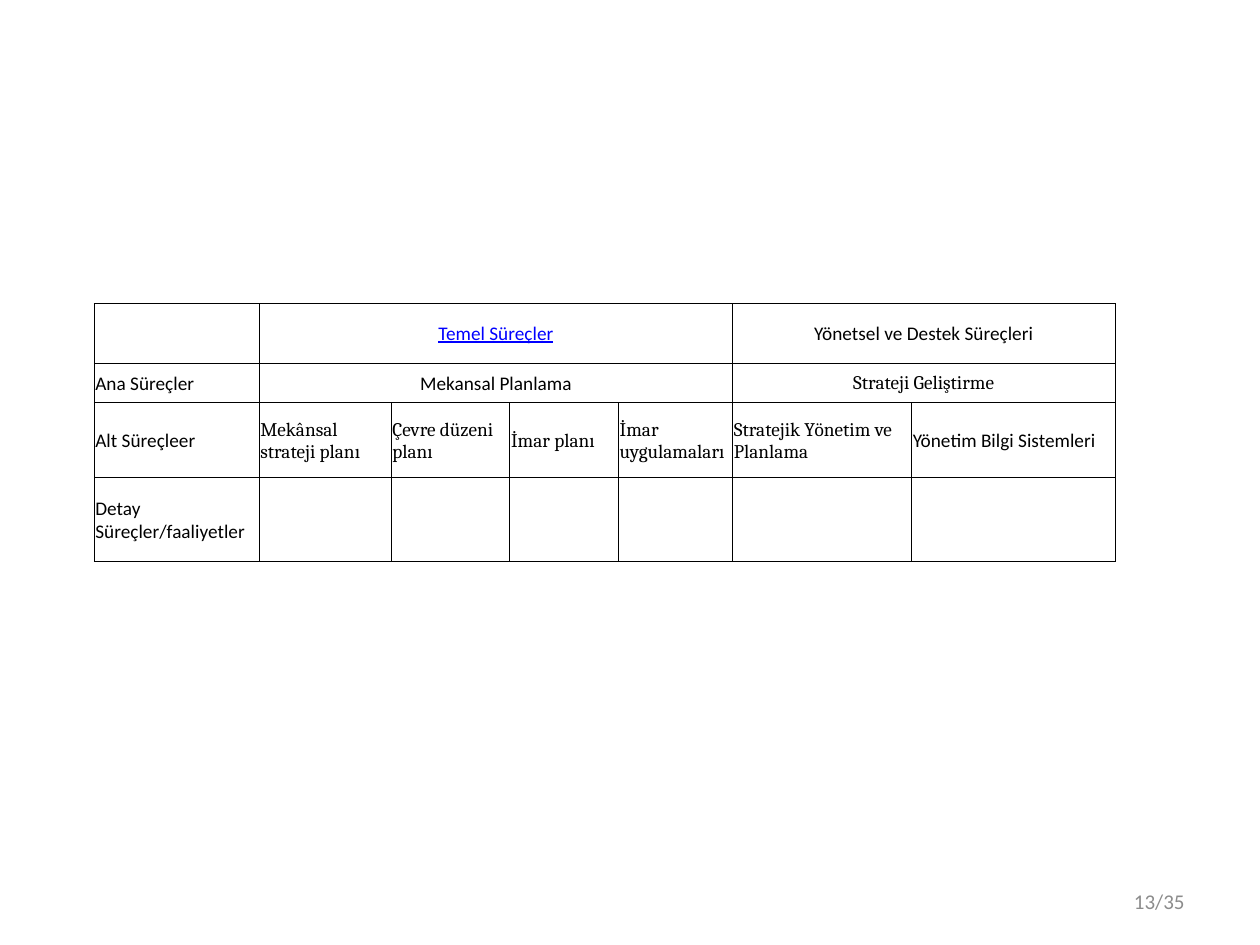
"""Build the process hierarchy table slide."""
from lxml import etree
from pptx import Presentation
from pptx.dml.color import RGBColor
from pptx.enum import text
from pptx.oxml import ns
from pptx.util import Pt

THEME = {
    "sans": "Calibri", "serif": "Cambria",
    "ink": "000000", "link": "0000FF", "muted": "8C8C8C",
    "body": 11, "page": 12, "border": 0.5,
}
LEFT, TOP = 53.8, 173.4
COLUMNS = [94.3, 75.5, 67.8, 62.1, 65.3, 102.2, 116.2]
ROWS = [34, 22.8, 42.9, 48]
SPANS = {(0, 1): 4, (0, 5): 2, (1, 1): 4, (1, 5): 2}
CELLS = [
    ["", "Temel Süreçler", "", "", "", "Yönetsel ve Destek Süreçleri", ""],
    ["Ana Süreçler", "Mekansal Planlama", "", "", "", "Strateji Geliştirme", ""],
    ["Alt Süreçleer", "Mekânsal strateji planı", "Çevre düzeni planı", "İmar planı",
     "İmar uygulamaları", "Stratejik Yönetim ve Planlama", "Yönetim Bilgi Sistemleri"],
    ["Detay Süreçler/faaliyetler", "", "", "", "", "", ""],
]
SERIF_CELLS = {(1, 5), (2, 1), (2, 2), (2, 3), (2, 4), (2, 5)}
LINK_CELL = (0, 1)
PAGE = "13/35"


def style_text(p, font, size, color, align, underline=False):
    p.alignment = align
    for r in p.runs:
        r.font.name, r.font.size = font, Pt(size)
        r.font.color.rgb = RGBColor.from_string(color)
        r.font.bold, r.font.underline = False, underline


def add_borders(cell):
    tc_pr = cell._tc.get_or_add_tcPr()
    for i, side in enumerate(("lnL", "lnR", "lnT", "lnB")):
        ln = etree.Element(ns.qn(f"a:{side}"), w=str(Pt(THEME["border"])))
        fill = etree.SubElement(ln, ns.qn("a:solidFill"))
        etree.SubElement(fill, ns.qn("a:srgbClr"), val=THEME["ink"])
        tc_pr.insert(i, ln)


def add_process_table(slide):
    table = slide.shapes.add_table(
        len(ROWS), len(COLUMNS), Pt(LEFT), Pt(TOP), Pt(sum(COLUMNS)), Pt(sum(ROWS))).table
    table.first_row = table.horz_banding = False
    for column, width in zip(table.columns, COLUMNS):
        column.width = Pt(width)
    for row, height in zip(table.rows, ROWS):
        row.height = Pt(height)
    for (i, j), span in SPANS.items():
        table.cell(i, j).merge(table.cell(i, j + span - 1))
    for i, labels in enumerate(CELLS):
        for j, label in enumerate(labels):
            cell, linked = table.cell(i, j), (i, j) == LINK_CELL
            cell.fill.background()
            cell.vertical_anchor = text.MSO_ANCHOR.MIDDLE
            cell.margin_left = cell.margin_right = cell.margin_top = Pt(0.7)
            cell.margin_bottom = Pt(0)
            add_borders(cell)
            if label:
                cell.text_frame.text = label
                style_text(cell.text_frame.paragraphs[0],
                           THEME["serif" if (i, j) in SERIF_CELLS else "sans"],
                           THEME["body"], THEME["link" if linked else "ink"],
                           text.PP_ALIGN.CENTER if (i, j) in SPANS else text.PP_ALIGN.LEFT,
                           linked)


def add_page_number(slide):
    tf = slide.shapes.add_textbox(Pt(516), Pt(500.5), Pt(168), Pt(28.8)).text_frame
    tf.word_wrap = True
    tf.vertical_anchor = text.MSO_ANCHOR.MIDDLE
    tf.text = PAGE
    style_text(tf.paragraphs[0], THEME["sans"], THEME["page"], THEME["muted"],
               text.PP_ALIGN.RIGHT)


def main():
    prs = Presentation()
    prs.slide_width, prs.slide_height = Pt(720), Pt(540)
    slide = prs.slides.add_slide(prs.slide_layouts[6])
    add_process_table(slide)
    add_page_number(slide)
    prs.save("out.pptx")


if __name__ == "__main__":
    main()
